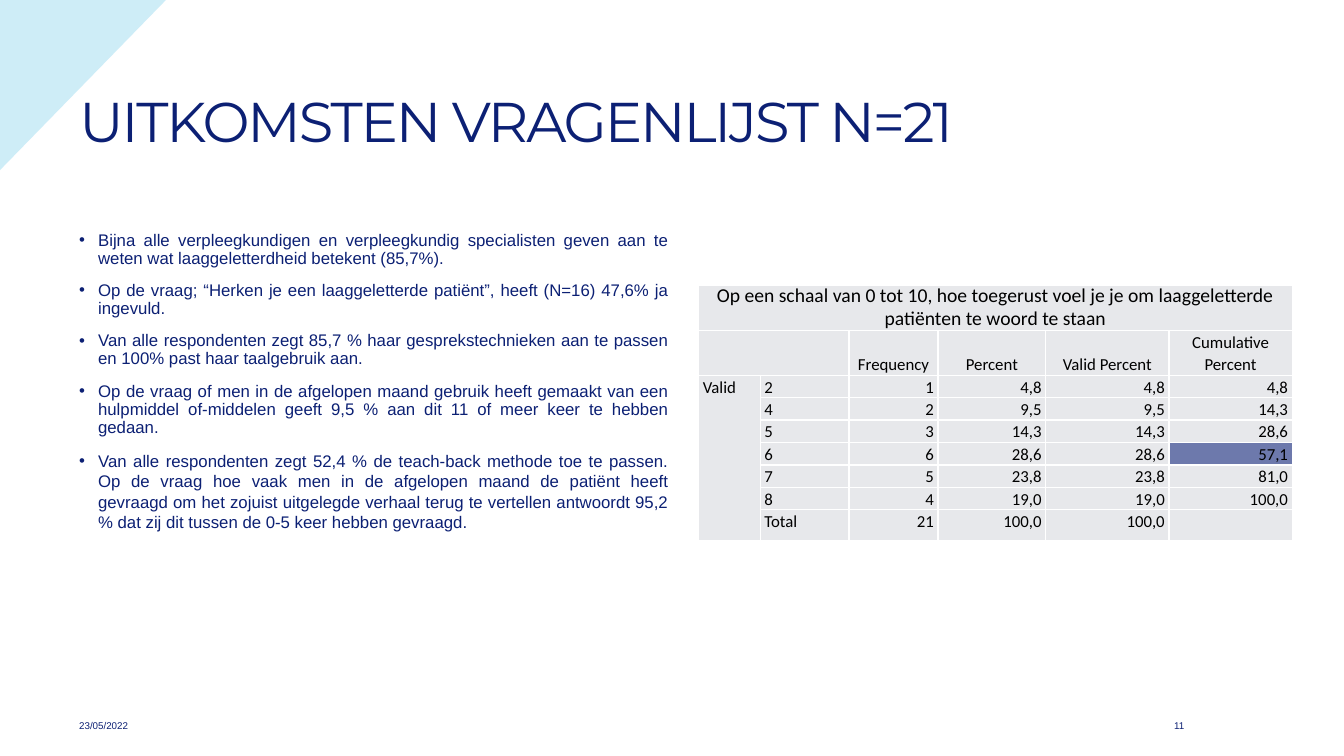
from dataclasses import dataclass

from lxml import etree
from pptx import Presentation
from pptx.dml.color import RGBColor
from pptx.enum import shapes, text
from pptx.oxml import ns
from pptx.util import Pt

LEFT, CENTER, RIGHT, JUSTIFY = (text.PP_ALIGN.LEFT, text.PP_ALIGN.CENTER,
                                text.PP_ALIGN.RIGHT, text.PP_ALIGN.JUSTIFY)
TOP, MIDDLE, BOTTOM = (text.MSO_ANCHOR.TOP, text.MSO_ANCHOR.MIDDLE,
                       text.MSO_ANCHOR.BOTTOM)


@dataclass(frozen=True)
class Theme:
    navy: str = "0C2074"
    sky: str = "86D2ED"
    cell: str = "E7E8EB"
    highlight: str = "6D79AC"
    white: str = "FFFFFF"
    black: str = "000000"
    heading_font: str = "Montserrat"
    body_font: str = "Arial"
    table_font: str = "Calibri"
    title: float = 40
    caption: float = 14
    body: float = 12
    footer: float = 7


THEME = Theme()

FINDINGS = [
    "Bijna alle verpleegkundigen en verpleegkundig specialisten geven aan te weten wat "
    "laaggeletterdheid betekent (85,7%).",
    "Op de vraag; “Herken je een laaggeletterde patiënt”, heeft (N=16) 47,6% ja ingevuld.",
    "Van alle respondenten zegt 85,7 % haar gesprekstechnieken aan te passen en 100% past "
    "haar taalgebruik aan.",
    "Op de vraag of men in de afgelopen maand gebruik heeft gemaakt van een hulpmiddel "
    "of-middelen geeft 9,5 % aan dit 11 of meer keer te hebben gedaan.",
    "Van alle respondenten zegt 52,4 % de teach-back methode toe te passen. Op de vraag hoe "
    "vaak men in de afgelopen maand de patiënt heeft gevraagd om het zojuist uitgelegde "
    "verhaal terug te vertellen antwoordt 95,2 % dat zij dit tussen de 0-5 keer hebben "
    "gevraagd.",
]

ROWS = [
    ["Op een schaal van 0 tot 10, hoe toegerust voel je je om laaggeletterde patiënten te "
     "woord te staan", "", "", "", "", ""],
    ["", "", "Frequency", "Percent", "Valid Percent", "Cumulative Percent"],
    ["Valid", "2", "1", "4,8", "4,8", "4,8"],
    ["", "4", "2", "9,5", "9,5", "14,3"],
    ["", "5", "3", "14,3", "14,3", "28,6"],
    ["", "6", "6", "28,6", "28,6", "57,1"],
    ["", "7", "5", "23,8", "23,8", "81,0"],
    ["", "8", "4", "19,0", "19,0", "100,0"],
    ["", "Total", "21", "100,0", "100,0", ""],
]
COLUMN_WIDTHS = [44, 63.5, 63.5, 77, 88, 88]
LINE = 16
MERGES = [((0, 0), (0, 5)), ((1, 0), (1, 1)), ((2, 0), (8, 0))]
HIGHLIGHTED = "57,1"


def rgb(color):
    return RGBColor.from_string(color)


def write(p, content, *, size=THEME.body, font=THEME.body_font, color=THEME.navy,
          align=LEFT, line=None, before=0, margin=0, bullet=None, tracking=None):
    p.alignment = align
    p.space_before = Pt(before)
    if line:
        p.line_spacing = line
    pPr = p._p.get_or_add_pPr()
    pPr.set("marL", str(Pt(margin)))
    pPr.set("indent", str(Pt(-margin if bullet else 0)))
    if bullet:
        etree.SubElement(pPr, ns.qn("a:buFont")).set("typeface", THEME.body_font)
        etree.SubElement(pPr, ns.qn("a:buChar")).set("char", bullet)
    if not content:
        return
    r = p.add_run()
    r.text = content
    r.font.size, r.font.name = Pt(size), font
    r.font.color.rgb = rgb(color)
    if tracking:
        r._r.get_or_add_rPr().set("spc", str(int(tracking * 100)))


def add_corner(s):
    sp = s.shapes.add_shape(shapes.MSO_SHAPE.RIGHT_TRIANGLE,
                            Pt(-1.5), Pt(0), Pt(123), Pt(120))
    sp.rotation = 90
    sp.shadow.inherit = False
    sp.line.fill.background()
    sp.fill.solid()
    sp.fill.fore_color.rgb = rgb(THEME.sky)
    color = sp.fill._xPr.find(".//" + ns.qn("a:srgbClr"))
    etree.SubElement(color, ns.qn("a:alpha")).set("val", "40000")


def set_title(s, content):
    sp = s.shapes.title
    sp.left, sp.top, sp.width, sp.height = Pt(49.5), Pt(36), Pt(803.5), Pt(78)
    tf = sp.text_frame
    tf.auto_size = text.MSO_AUTO_SIZE.NONE
    tf.vertical_anchor = BOTTOM
    write(tf.paragraphs[0], content, size=THEME.title, font=THEME.heading_font,
          line=0.9, tracking=-1.5)


def add_text(s, left, top, width, height):
    tf = s.shapes.add_textbox(Pt(left), Pt(top), Pt(width), Pt(height)).text_frame
    tf.word_wrap = True
    return tf


def add_findings(s):
    tf = add_text(s, 49.5, 162, 435.5, 300)
    for i, finding in enumerate(FINDINGS):
        p = tf.add_paragraph() if i else tf.paragraphs[0]
        write(p, finding, align=JUSTIFY, line=1.0 if i == len(FINDINGS) - 1 else 0.9,
              before=10 if i else 0, margin=13.5, bullet="•")


def add_footer(s, content, left, width, align):
    tf = add_text(s, left, 510.5, width, 16)
    write(tf.paragraphs[0], content, size=THEME.footer, align=align)


def add_borders(cell):
    tcPr = cell._tc.get_or_add_tcPr()
    for i, side in enumerate("LRTB"):
        ln = etree.Element(ns.qn(f"a:ln{side}"), w=str(Pt(1)))
        fill = etree.SubElement(ln, ns.qn("a:solidFill"))
        etree.SubElement(fill, ns.qn("a:srgbClr")).set("val", THEME.white)
        tcPr.insert(i, ln)


def format_cell(cell, content, row, col):
    cell.margin_left = cell.margin_right = cell.margin_top = cell.margin_bottom = 0
    cell.vertical_anchor = {0: MIDDLE, 1: BOTTOM}.get(row, TOP)
    cell.fill.solid()
    cell.fill.fore_color.rgb = rgb(THEME.highlight if content == HIGHLIGHTED
                                   else THEME.cell)
    add_borders(cell)
    align = CENTER if row < 2 else LEFT if col < 2 else RIGHT
    margin = 3
    cell.margin_right = Pt(margin)
    write(cell.text_frame.paragraphs[0], content, font=THEME.table_font,
          size=THEME.body if row else THEME.caption, color=THEME.black,
          align=align, line=Pt(LINE), margin=margin)


def add_scores(s):
    heights = [LINE * 2 if i < 2 else LINE for i in range(len(ROWS))]
    table = s.shapes.add_table(len(ROWS), len(COLUMN_WIDTHS), Pt(499), Pt(204),
                               Pt(sum(COLUMN_WIDTHS)), Pt(sum(heights))).table
    table.first_row = table.horz_banding = False
    for column, width in zip(table.columns, COLUMN_WIDTHS):
        column.width = Pt(width)
    for i, (row, height) in enumerate(zip(table.rows, heights)):
        row.height = Pt(height)
        for j, content in enumerate(ROWS[i]):
            format_cell(table.cell(i, j), content, i, j)
    for first, last in MERGES:
        table.cell(*first).merge(table.cell(*last))


def main():
    prs = Presentation()
    prs.slide_width, prs.slide_height = Pt(960), Pt(540)
    s = prs.slides.add_slide(prs.slide_layouts[5])
    add_corner(s)
    set_title(s, "UITKOMSTEN VRAGENLIJST N=21")
    add_scores(s)
    add_findings(s)
    add_footer(s, "23/05/2022", 49.5, 65.5, LEFT)
    add_footer(s, "11", 815, 38, RIGHT)
    prs.save("out.pptx")


if __name__ == "__main__":
    main()
